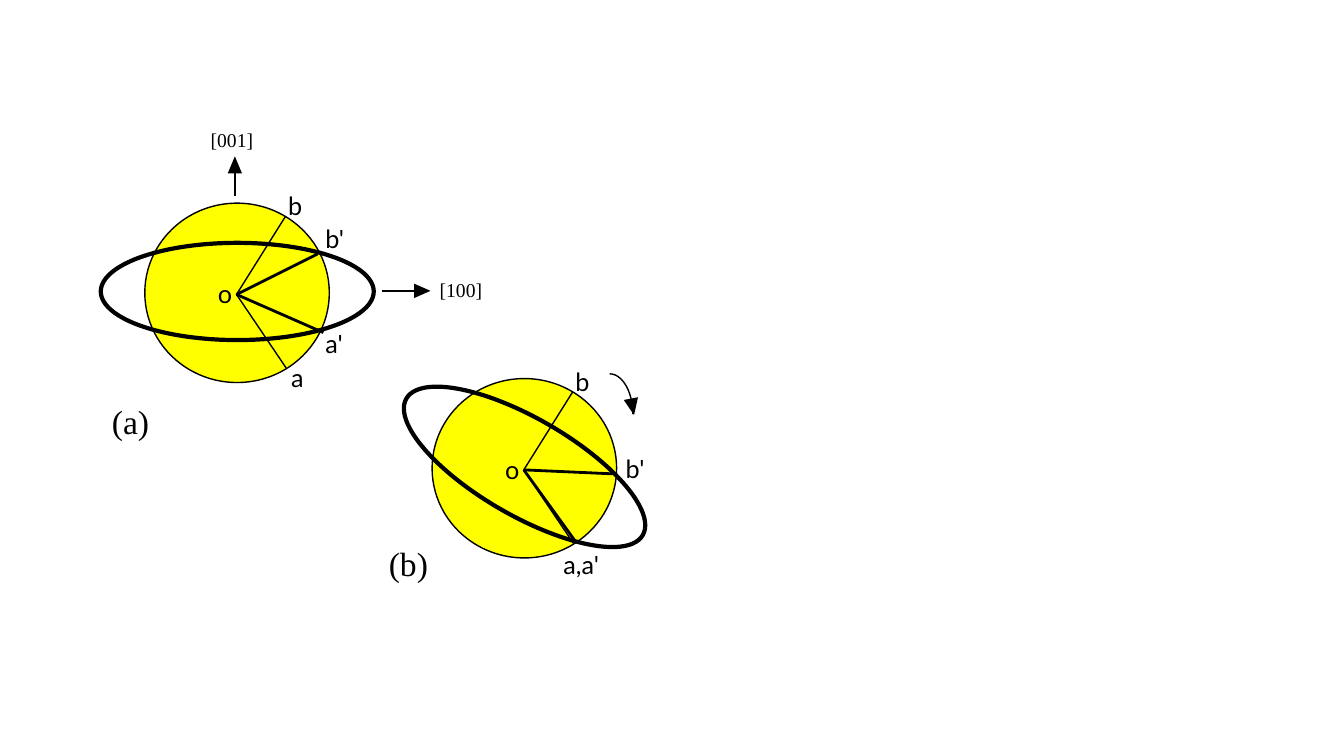
import pptx
import pptx.dml.color
import pptx.enum.shapes
import pptx.enum.text
import pptx.util
from pptx.util import Cm

SHAPES = pptx.enum.shapes.MSO_SHAPE
BLACK = "000000"
YELLOW = "FFFF00"
CENTRE = (5.96, 7.42)
PANEL_B_SHIFT = (7.24, 4.42)


def colour(code):
    return pptx.dml.color.RGBColor.from_string(code)


def shifted(point, shift):
    return point[0] + shift[0], point[1] + shift[1]


def add_outline(page, kind, corner, size, weight, fill=None, angle=0):
    shape = page.shapes.add_shape(kind, *map(Cm, corner + size))
    shape.shadow.inherit = False
    shape.rotation = angle
    if fill:
        shape.fill.solid()
        shape.fill.fore_color.rgb = colour(fill)
    else:
        shape.fill.background()
    shape.line.color.rgb = colour(BLACK)
    shape.line.width = pptx.util.Pt(weight)


def add_line(page, start, end, weight):
    line = page.shapes.add_connector(
        pptx.enum.shapes.MSO_CONNECTOR.STRAIGHT, *map(Cm, start + end))
    line.line.color.rgb = colour(BLACK)
    line.line.width = pptx.util.Pt(weight)
    properties = line._element.spPr
    properties.append(properties.makeelement(pptx.oxml.ns.qn("a:effectLst"), {}))


def add_arrowhead(page, corners):
    points = [(Cm(x), Cm(y)) for x, y in corners]
    builder = page.shapes.build_freeform(*points[0])
    builder.add_line_segments(points[1:], close=True)
    head = builder.convert_to_shape()
    head.shadow.inherit = False
    head.fill.solid()
    head.fill.fore_color.rgb = colour(BLACK)
    head.line.fill.background()


def add_label(page, text, corner, size, font="Lato", points=18):
    box = page.shapes.add_textbox(*map(Cm, corner + size))
    frame = box.text_frame
    frame.margin_left = frame.margin_right = 0
    frame.margin_top = frame.margin_bottom = 0
    frame.word_wrap = False
    frame.auto_size = pptx.enum.text.MSO_AUTO_SIZE.SHAPE_TO_FIT_TEXT
    span = frame.paragraphs[0].add_run()
    span.text = text
    span.font.name = font
    span.font.size = pptx.util.Pt(points)
    span.font.color.rgb = colour(BLACK)


def add_panel(page, shift, angle, thick_ends, labels):
    """Draw a sphere, its tilted ellipse, the radii and their labels."""
    add_outline(page, SHAPES.OVAL, shifted((3.65, 5.12), shift), (4.65, 4.52), 1, YELLOW)
    add_outline(page, SHAPES.OVAL, shifted((2.54, 6.12), shift), (6.88, 2.45), 3, angle=angle)
    centre = shifted(CENTRE, shift)
    for end in thick_ends:
        add_line(page, centre, end, 2)
    for end in ((7.19, 5.46), (7.21, 9.27)):
        add_line(page, centre, shifted(end, shift), 1)
    add_label(page, "o", shifted((5.49, 7.02), shift), (0.38, 0.76))
    add_label(page, "b", shifted((7.26, 4.8), shift), (0.38, 0.76))
    for text, corner, width in labels:
        add_label(page, text, corner, (width, 0.76))


def main():
    deck = pptx.Presentation()
    deck.slide_width, deck.slide_height = Cm(33.87), Cm(19.05)
    page = deck.slides.add_slide(deck.slide_layouts[6])

    # Sphere before and after the rotation
    add_panel(page, (0, 0), 0, [(8, 6.4), (8.15, 8.38)],
              [("a", (7.34, 9.12), 0.36), ("a'", (8.2, 8.28), 0.56),
               ("b'", (8.2, 5.64), 0.58)])
    add_panel(page, PANEL_B_SHIFT, 30, [(15.44, 11.94), (14.5, 13.64)],
              [("b'", (15.77, 11.42), 0.58), ("a,a'", (14.2, 13.84), 1.09)])

    # Crystal axes
    add_line(page, (9.63, 7.33), (10.44, 7.33), 1)
    add_arrowhead(page, [(10.44, 7.15), (10.85, 7.33), (10.44, 7.51)])
    add_line(page, (5.92, 4.93), (5.92, 4.37), 1)
    add_arrowhead(page, [(5.74, 4.37), (5.92, 3.94), (6.1, 4.37)])

    # Sense of rotation
    add_outline(page, SHAPES.ARC, (14.78, 9.42), (1.17, 2.03), 1)
    add_arrowhead(page, [(15.72, 10.08), (15.98, 10.46), (16.08, 10.01)])

    # Axis names and panel letters
    for text, corner, size, points in (
            ("[100]", (11.08, 7.01), (1.15, 0.61), 14),
            ("[001]", (5.31, 3.23), (1.15, 0.61), 14),
            ("(a)", (2.82, 10.11), (0.94, 1.02), 24),
            ("(b)", (9.8, 13.67), (0.99, 1.02), 24)):
        add_label(page, text, corner, size, "Times New Roman", points)

    deck.save("out.pptx")


if __name__ == "__main__":
    main()
